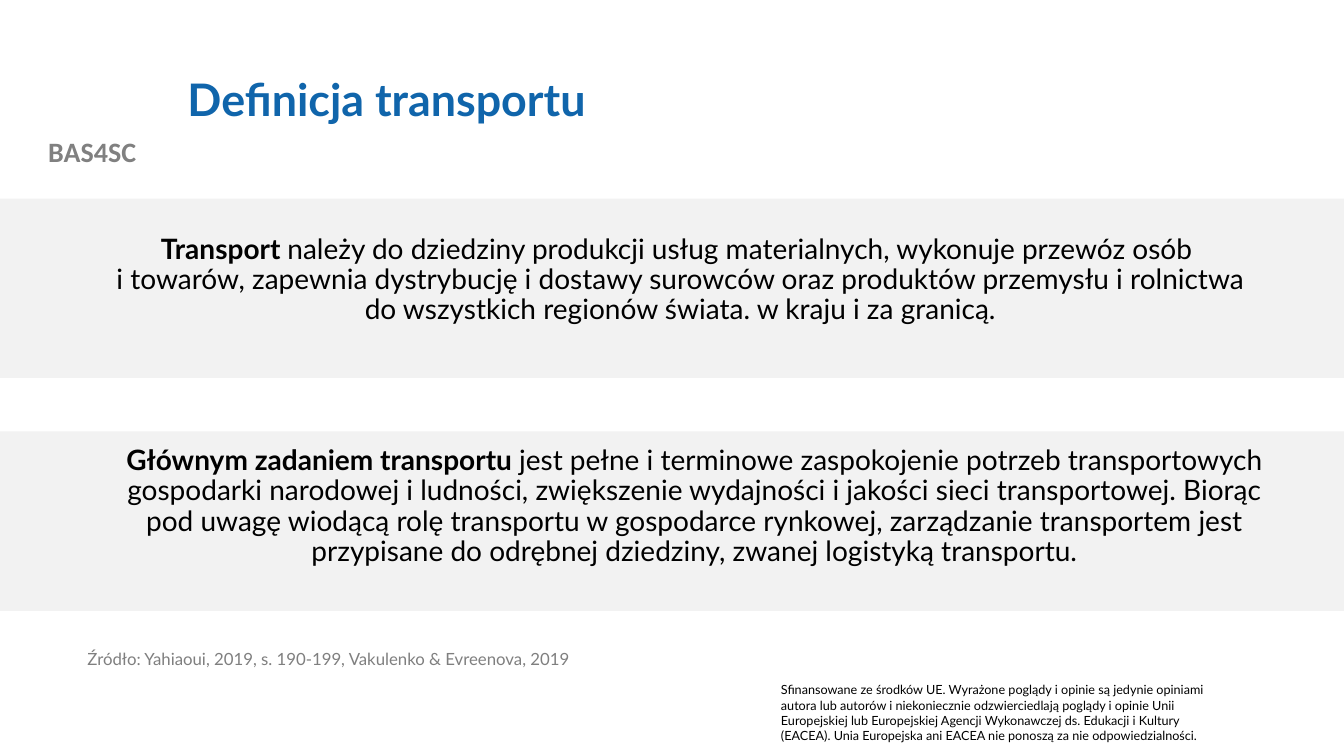
from pptx import Presentation
from pptx.dml.color import RGBColor
from pptx.enum.shapes import MSO_SHAPE
from pptx.enum.text import MSO_ANCHOR, MSO_AUTO_SIZE, PP_ALIGN
from pptx.oxml.ns import qn
from pptx.util import Pt

RECTANGLE = MSO_SHAPE.RECTANGLE
TOP, MIDDLE = MSO_ANCHOR.TOP, MSO_ANCHOR.MIDDLE
LEFT, CENTER = PP_ALIGN.LEFT, PP_ALIGN.CENTER
NO_AUTOFIT = MSO_AUTO_SIZE.NONE

SLIDE_WIDTH, SLIDE_HEIGHT = 960, 540
BAND_TOPS, BAND_HEIGHT = (308.2, 141.8), 128.2


def rgb(hex_colour):
    return RGBColor.from_string(hex_colour)


class DefinitionSlide:
    """Holds the style and the slide being filled; lengths are in points."""

    FONT = "Lato"
    BLACK, BLUE = "000000", "1065AB"
    GREY, SOURCE_GREY, BAND_GREY = "808080", "7F7F7F", "F2F2F2"

    def __init__(self, presentation):
        self.slide = presentation.slides.add_slide(presentation.slide_layouts[1])

    def band(self, top):
        """Draw a full-width grey band behind everything else."""
        band = self.slide.shapes.add_shape(
            RECTANGLE, 0, Pt(top), Pt(SLIDE_WIDTH), Pt(BAND_HEIGHT))
        band.shadow.inherit = False
        band.fill.solid()
        band.fill.fore_color.rgb = rgb(self.BAND_GREY)
        band.line.fill.background()
        self.slide.shapes._spTree.insert(2, band._element)

    def fill_text(self, holder, parts, size, colour=BLACK, align=LEFT,
                  spacing=None, anchor=TOP, font=FONT):
        """Fill a holder with one paragraph of (text, bold) parts."""
        frame = holder.text_frame
        frame.word_wrap = True
        frame.auto_size = NO_AUTOFIT
        frame.vertical_anchor = anchor
        paragraph = frame.paragraphs[0]
        paragraph.alignment = align
        paragraph.space_before = Pt(0)
        if spacing:
            paragraph.line_spacing = spacing
        if holder.is_placeholder:
            properties = paragraph._p.get_or_add_pPr()
            properties.set("marL", "0")
            properties.set("indent", "0")
            properties.append(properties.makeelement(qn("a:buNone"), {}))
        paragraph.font.name = font
        paragraph.font.size = Pt(size)
        paragraph.font.color.rgb = rgb(colour)
        for text, bold in parts:
            for number, line in enumerate(text.split("\n")):
                if number:
                    paragraph.add_line_break()
                run = paragraph.add_run()
                run.text = line
                run.font.bold = bold

    def placeholder(self, index, box, parts, size, **style):
        holder = self.slide.placeholders[index]
        holder.left, holder.top, holder.width, holder.height = map(Pt, box)
        self.fill_text(holder, parts, size, **style)

    def text(self, box, parts, size, **style):
        holder = self.slide.shapes.add_textbox(*map(Pt, box))
        self.fill_text(holder, parts, size, **style)


def main():
    presentation = Presentation()
    presentation.slide_width = Pt(SLIDE_WIDTH)
    presentation.slide_height = Pt(SLIDE_HEIGHT)
    page = DefinitionSlide(presentation)

    for top in reversed(BAND_TOPS):
        page.band(top)

    page.text((0, 92.2, 131.8, 31.7), [("BAS4SC", True)], 20,
              colour=page.GREY, align=CENTER, font="Calibri")
    page.text((550.8, 483.8, 333.4, 51.1), [(
        "Sfinansowane ze środków UE. Wyrażone poglądy i opinie są jedynie "
        "opiniami autora lub autorów i niekoniecznie odzwierciedlają poglądy "
        "i opinie Unii Europejskiej lub Europejskiej Agencji Wykonawczej ds. "
        "Edukacji i Kultury (EACEA). Unia Europejska ani EACEA nie ponoszą "
        "za nie odpowiedzialności.", False)], 9)

    page.placeholder(0, (126.7, 28.8, 767.5, 87.8),
                     [("Definicja transportu", True)], 32,
                     colour=page.BLUE, spacing=0.9, anchor=MIDDLE)
    page.placeholder(1, (72, 164.2, 828, 121.7), [
        ("Transport ", True),
        ("należy do dziedziny produkcji usług materialnych, wykonuje przewóz "
         "osób \ni towarów, zapewnia dystrybucję i dostawy surowców oraz "
         "produktów przemysłu i rolnictwa do wszystkich regionów świata. "
         "w kraju i za granicą.", False),
    ], 20, align=CENTER, spacing=0.9)
    page.text((67, 315.4, 858.2, 121.7), [
        ("Głównym zadaniem transportu ", True),
        ("jest pełne i terminowe zaspokojenie potrzeb transportowych "
         "gospodarki narodowej i ludności, zwiększenie wydajności i jakości "
         "sieci transportowej. Biorąc pod uwagę wiodącą rolę transportu "
         "w gospodarce rynkowej, zarządzanie transportem jest przypisane do "
         "odrębnej dziedziny, zwanej logistyką transportu.", False),
    ], 20, align=CENTER, spacing=0.9)
    page.text((55.4, 461.5, 403.2, 37.4), [(
        "Źródło: Yahiaoui, 2019, s. 190-199, Vakulenko & Evreenova, 2019",
        False)], 12, colour=page.SOURCE_GREY, spacing=0.9)

    presentation.save("out.pptx")


if __name__ == "__main__":
    main()
